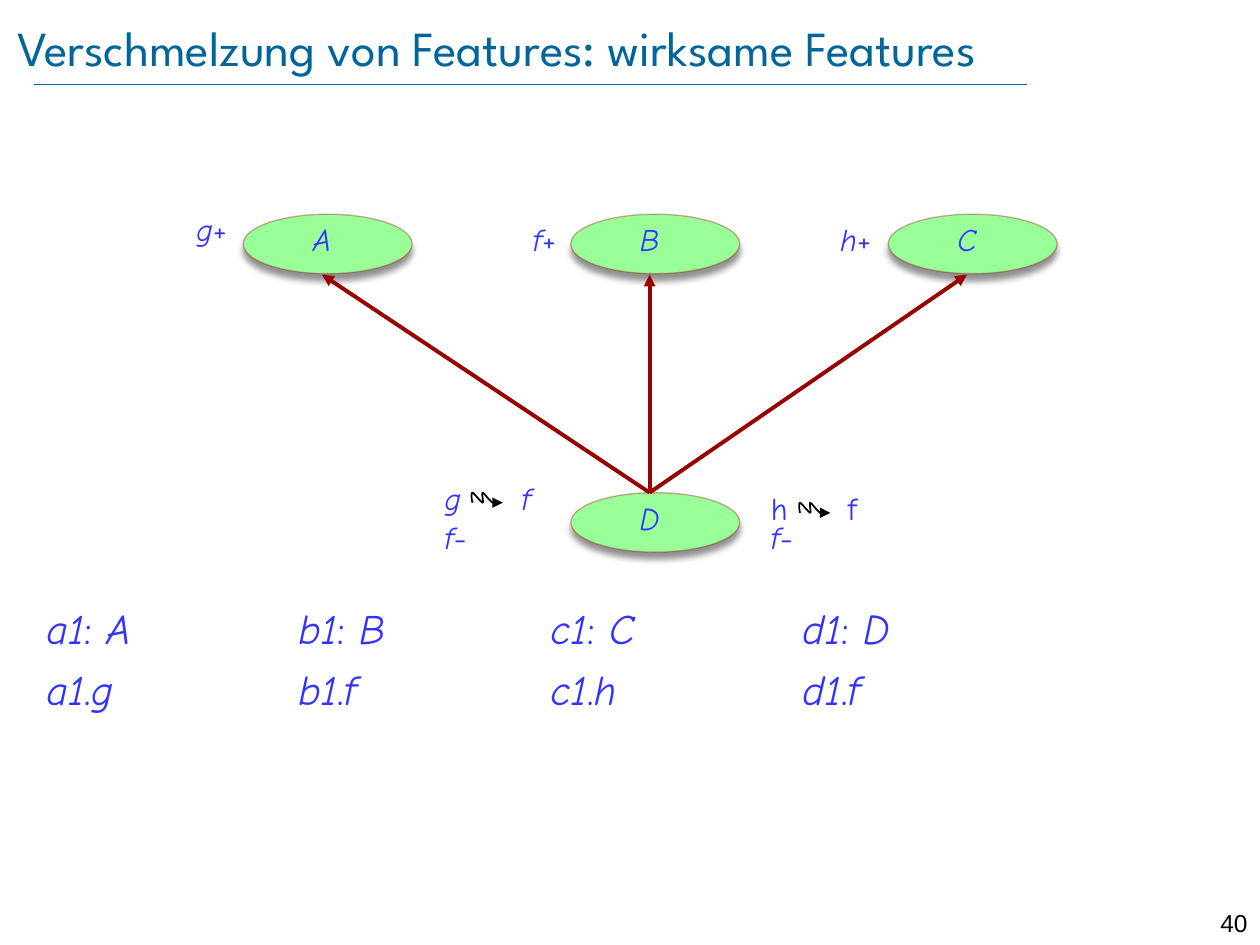
from dataclasses import dataclass
from lxml.etree import SubElement
from pptx import Presentation
from pptx.dml.color import RGBColor
from pptx.enum.shapes import MSO_CONNECTOR, MSO_SHAPE
from pptx.enum.text import MSO_ANCHOR, PP_ALIGN
from pptx.oxml.ns import qn
from pptx.util import Pt


@dataclass(frozen=True)
class Theme:
    title: RGBColor = RGBColor(0x00, 0x66, 0x99)
    label: RGBColor = RGBColor(0x33, 0x33, 0xFF)
    node: RGBColor = RGBColor(0x99, 0xFF, 0x99)
    arrow: RGBColor = RGBColor(0x99, 0x00, 0x00)
    ink: RGBColor = RGBColor(0x00, 0x00, 0x00)
    title_font: str = "League Spartan"
    label_font: str = "Comic Neue"
    number_font: str = "Arial"
    title_size: float = 28
    body_size: float = 24
    label_size: float = 18
    number_size: float = 14


THEME = Theme()

TITLE = "Verschmelzung von Features: wirksame Features"
PAGE_NUMBER = "40"
PARENT_TOP, CHILD_TOP = 122.4, 281.5
PARENTS = [("A", 139), ("B", 326.2), ("C", 507.6)]
CHILD = ("D", 326.2)
NODE_WIDTH, NODE_HEIGHT = 96.5, 34
NAME_OFFSET, NAME_WIDTH, LABEL_HEIGHT = 22.3, 45.4, 28.8
FEATURES = [
    ("g", "+", 105.1, 116.6),
    ("f", "+", 297.4, 122.4),
    ("h", "+", 473, 122.4),
    ("f", "-", 247, 292.3),
    ("f", "-", 433.4, 292.3),
]
RENAMINGS = [
    ("g\tf", True, 247, 270, 269.3, 281.5),
    ("h\tf", False, 433.4, 275.8, 456.5, 287.3),
]
RENAMING_TAB = 44
DECLARATIONS = [
    (": ", [("a1", "A"), ("b1", "B"), ("c1", "C"), ("d1", "D")]),
    (".", [("a1", "g"), ("b1", "f"), ("c1", "h"), ("d1", "f")]),
]
COLUMN_STEP = 144
WAVE_START = (0.7, 5.8)
WAVE_CURVES = [
    ((0, 2.9), (0, 0), (0.7, 0)),
    ((1.4, 0), (5.8, 5.8), (6.5, 5.8)),
    ((7.2, 5.8), (5.8, 0), (6.5, 0)),
    ((7.2, 0), (10.1, 4.3), (12.2, 5.8)),
    ((14.4, 6.5), (17.3, 5.8), (18, 5.8)),
]
CURVE_STEPS = 8


def add_box(page, left, top, width, height, inset=True):
    box = page.shapes.add_textbox(Pt(left), Pt(top), Pt(width), Pt(height))
    frame = box.text_frame
    frame.word_wrap = True
    if not inset:
        frame.margin_left = frame.margin_right = 0
        frame.margin_top = frame.margin_bottom = 0
    return box


def add_span(para, text, size, italic=False, color=THEME.label, font=THEME.label_font):
    span = para.add_run()
    span.text = text
    span.font.size = Pt(size)
    span.font.name = font
    span.font.italic = italic
    span.font.color.rgb = color


def add_tabs(para, positions):
    tabs = SubElement(para._p.get_or_add_pPr(), qn("a:tabLst"))
    for position in positions:
        SubElement(tabs, qn("a:tab"), pos=str(Pt(position)), algn="l")


def add_arrowhead(shape):
    SubElement(shape.line._get_or_add_ln(), qn("a:tailEnd"), type="triangle")


def add_line(page, start, end, color, width):
    line = page.shapes.add_connector(MSO_CONNECTOR.STRAIGHT, *map(Pt, start + end))
    line.line.color.rgb = color
    line.line.width = Pt(width)
    SubElement(line._element.spPr, qn("a:effectLst"))
    return line


def add_node(page, left, top):
    node = page.shapes.add_shape(
        MSO_SHAPE.OVAL, Pt(left), Pt(top), Pt(NODE_WIDTH), Pt(NODE_HEIGHT))
    node.fill.solid()
    node.fill.fore_color.rgb = THEME.node
    node.line.color.rgb = THEME.arrow
    node.line.width = Pt(0.75)
    line_color = node.line._get_or_add_ln().find(".//" + qn("a:srgbClr"))
    SubElement(line_color, qn("a:alpha"), val="34000")
    node.shadow.inherit = False
    effects = node._element.spPr.find(qn("a:effectLst"))
    shadow = SubElement(effects, qn("a:outerShdw"), blurRad=str(Pt(4)),
                        dist=str(Pt(4)), dir="5400000", rotWithShape="0")
    shadow_color = SubElement(shadow, qn("a:srgbClr"), val=str(THEME.ink))
    SubElement(shadow_color, qn("a:alpha"), val="43000")


def add_name(page, name, left, top):
    box = add_box(page, left + NAME_OFFSET, top, NAME_WIDTH, LABEL_HEIGHT)
    para = box.text_frame.paragraphs[0]
    para.alignment = PP_ALIGN.CENTER
    add_span(para, name, THEME.label_size, True)
    return box


def curve_point(start, first, second, end, t):
    u = 1 - t
    return tuple(u**3 * a + 3 * u * u * t * b + 3 * u * t * t * c + t**3 * d
                 for a, b, c, d in zip(start, first, second, end))


def add_wave(page, left, top):
    points, start = [WAVE_START], WAVE_START
    for curve in WAVE_CURVES:
        points += [curve_point(start, *curve, step / CURVE_STEPS)
                   for step in range(1, CURVE_STEPS + 1)]
        start = curve[-1]
    placed = [(Pt(left + x), Pt(top + y)) for x, y in points]
    builder = page.shapes.build_freeform(*placed[0])
    builder.add_line_segments(placed[1:], close=False)
    wave = builder.convert_to_shape()
    wave.shadow.inherit = False
    wave.fill.background()
    wave.line.color.rgb = THEME.ink
    wave.line.width = Pt(1)
    add_arrowhead(wave)


def add_frame(page):
    add_line(page, (19.5, 48.2), (586.8, 48.2), THEME.title, 0.25)
    number = add_box(page, 680.4, 515.5, 39.6, 17.3).text_frame.paragraphs[0]
    number.alignment = PP_ALIGN.RIGHT
    add_span(number, PAGE_NUMBER, THEME.number_size, False, THEME.ink, THEME.number_font)
    title = add_box(page, 10, 9.4, 674.6, 34.6, inset=False).text_frame
    title.vertical_anchor = MSO_ANCHOR.MIDDLE
    add_span(title.paragraphs[0], TITLE, THEME.title_size, False,
             THEME.title, THEME.title_font)


def add_declarations(page):
    frame = add_box(page, 19.5, 340.6, 676.8, 72).text_frame
    for row, (separator, pairs) in enumerate(DECLARATIONS):
        para = frame.add_paragraph() if row else frame.paragraphs[0]
        if row:
            para.space_before = Pt(6)
        add_tabs(para, [COLUMN_STEP * column for column in range(1, len(pairs))])
        for column, (instance, member) in enumerate(pairs):
            add_span(para, ("\t" if column else "") + instance, THEME.body_size, True)
            add_span(para, separator, THEME.body_size)
            add_span(para, member, THEME.body_size, True)


def add_diagram(page):
    nodes = [(*parent, PARENT_TOP) for parent in PARENTS] + [(*CHILD, CHILD_TOP)]
    for _, left, top in nodes:
        add_node(page, left, top)
    names = [add_name(page, *node) for node in nodes]
    center = NAME_OFFSET + NAME_WIDTH / 2
    for _, left in PARENTS:
        arrow = add_line(page, (CHILD[1] + center, CHILD_TOP),
                         (left + center, PARENT_TOP + NODE_HEIGHT + 0.5),
                         THEME.arrow, 2.25)
        arrow.begin_connect(names[-1], 0)
        add_arrowhead(arrow)
    for feature, sign, left, top in FEATURES:
        para = add_box(page, left, top, 39.6, LABEL_HEIGHT).text_frame.paragraphs[0]
        add_span(para, feature, THEME.label_size, True)
        add_span(para, sign, THEME.label_size)
    for text, italic, left, top, wave_left, wave_top in RENAMINGS:
        add_wave(page, wave_left, wave_top)
        para = add_box(page, left, top, 67.7, LABEL_HEIGHT).text_frame.paragraphs[0]
        add_tabs(para, [RENAMING_TAB])
        add_span(para, text, THEME.label_size, italic)


def main():
    deck = Presentation()
    deck.slide_width, deck.slide_height = Pt(720), Pt(540)
    page = deck.slides.add_slide(deck.slide_layouts[6])
    add_frame(page)
    add_declarations(page)
    add_diagram(page)
    deck.save("out.pptx")


if __name__ == "__main__":
    main()
